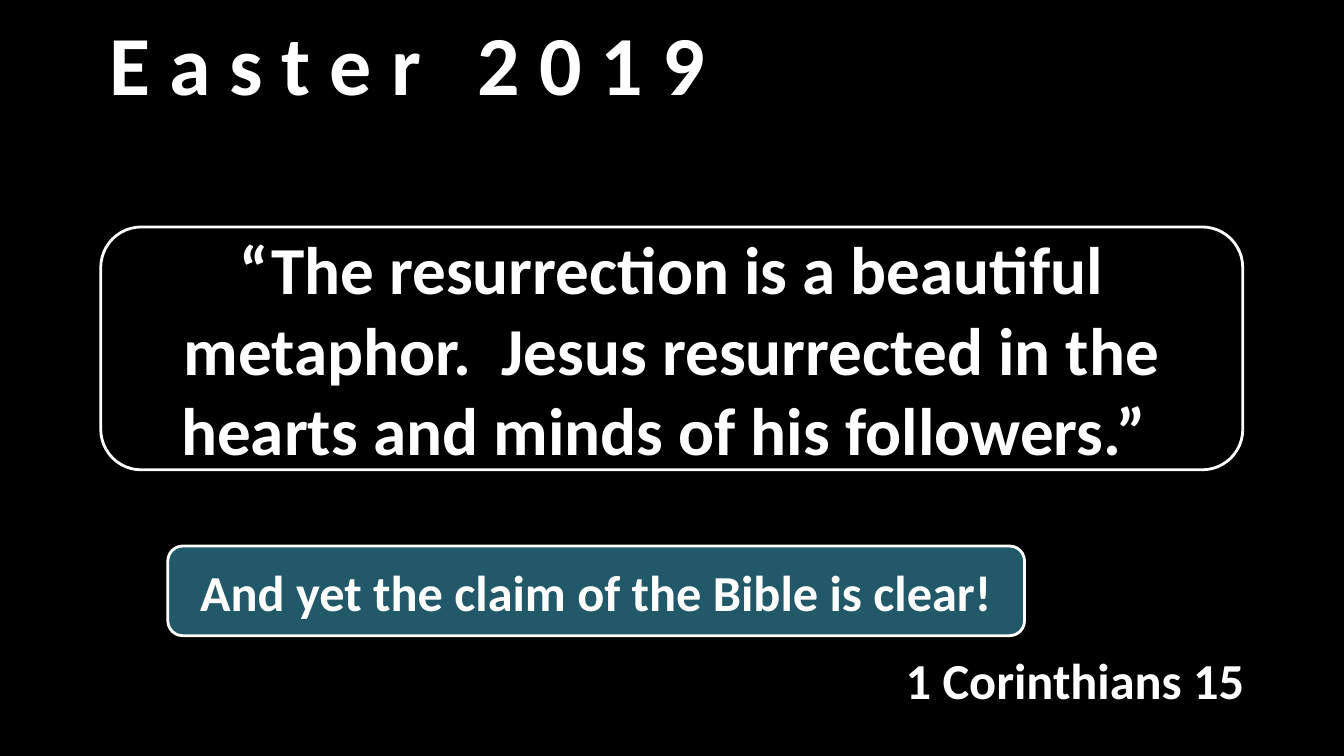
from dataclasses import dataclass

import pptx
import pptx.dml.color
import pptx.enum.shapes
import pptx.enum.text
import pptx.oxml.ns
import pptx.util
from lxml import etree

Cm = pptx.util.Cm
Pt = pptx.util.Pt
RGBColor = pptx.dml.color.RGBColor


@dataclass(frozen=True)
class Theme:
    black: RGBColor = RGBColor(0x00, 0x00, 0x00)
    white: RGBColor = RGBColor(0xFF, 0xFF, 0xFF)
    teal: RGBColor = RGBColor(0x21, 0x59, 0x68)
    font: str = "Calibri"
    title_size: int = 60
    quote_size: int = 48
    note_size: int = 36
    outline: int = 2
    title_opacity: int = 52


THEME = Theme()


@dataclass(frozen=True)
class Box:
    """A region of the slide, in centimetres."""
    left: float
    top: float
    width: float
    height: float

    def lengths(self):
        return Cm(self.left), Cm(self.top), Cm(self.width), Cm(self.height)


def write_text(shape, text, size):
    frame = shape.text_frame
    frame.word_wrap = True
    frame.auto_size = pptx.enum.text.MSO_AUTO_SIZE.NONE
    frame.vertical_anchor = pptx.enum.text.MSO_ANCHOR.MIDDLE
    paragraph = frame.paragraphs[0]
    paragraph.alignment = pptx.enum.text.PP_ALIGN.CENTER
    run = paragraph.add_run()
    run.text = text
    run.font.name = THEME.font
    run.font.size = Pt(size)
    run.font.bold = True
    run.font.color.rgb = THEME.white


def add_title(slide, box, text):
    title = slide.shapes.title
    title.left, title.top, title.width, title.height = box.lengths()
    title.fill.solid()
    title.fill.fore_color.rgb = THEME.black
    qualified = pptx.oxml.ns.qn
    color = title.fill._xPr.find(f"{qualified('a:solidFill')}/{qualified('a:srgbClr')}")
    etree.SubElement(color, qualified("a:alpha"), val=str(THEME.title_opacity * 1000))
    write_text(title, text, THEME.title_size)


def add_panel(slide, box, text, size, fill=None):
    """Add a rounded panel; without a fill it has no outline either."""
    panel = slide.shapes.add_shape(
        pptx.enum.shapes.MSO_SHAPE.ROUNDED_RECTANGLE, *box.lengths())
    panel.shadow.inherit = False
    if fill is None:
        panel.fill.background()
        panel.line.fill.background()
    else:
        panel.fill.solid()
        panel.fill.fore_color.rgb = fill
        panel.line.color.rgb = THEME.white
        panel.line.width = Pt(THEME.outline)
    write_text(panel, text, size)


def build_quote_slide(presentation):
    slide = presentation.slides.add_slide(
        presentation.slide_layouts.get_by_name("Title Only"))
    slide.background.fill.solid()
    slide.background.fill.fore_color.rgb = THEME.black
    add_title(slide, Box(0.64, 0.25, 19.25, 2.64), "E a s t e r   2 0 1 9")
    add_panel(
        slide, Box(2.54, 5.72, 28.78, 6.12),
        "“The resurrection is a beautiful metaphor.  Jesus resurrected "
        "in the hearts and minds of his followers.” ",
        THEME.quote_size, THEME.black)
    add_panel(slide, Box(4.23, 13.76, 21.59, 2.26),
              "And yet the claim of the Bible is clear!", THEME.note_size, THEME.teal)
    add_panel(slide, Box(21.17, 16, 11.85, 2.26), "1 Corinthians 15", THEME.note_size)


def main():
    presentation = pptx.Presentation()
    presentation.slide_width = Cm(33.87)
    presentation.slide_height = Cm(19.05)
    build_quote_slide(presentation)
    presentation.save("out.pptx")


if __name__ == "__main__":
    main()
